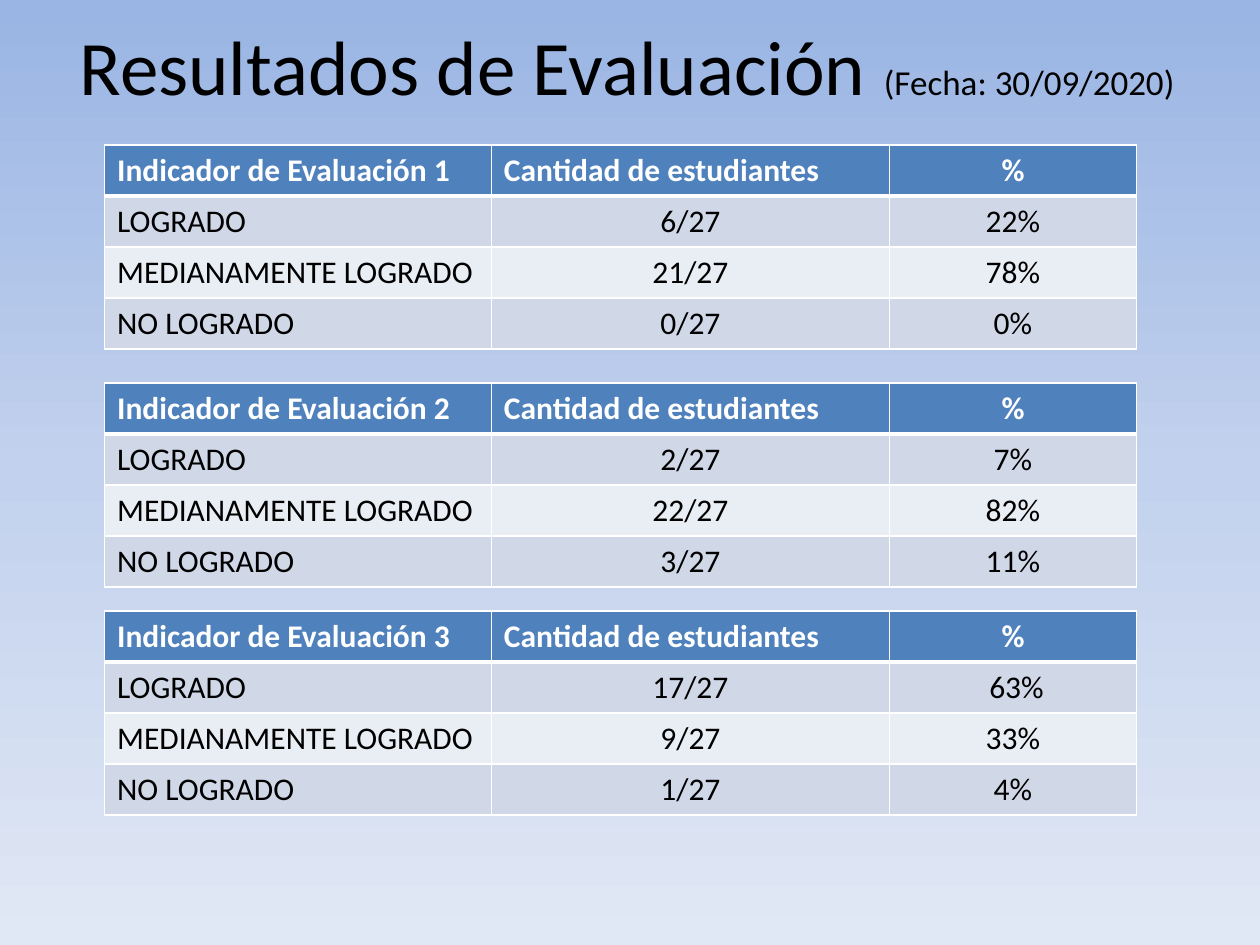
from copy import deepcopy
from typing import NamedTuple

from lxml import etree
from pptx import Presentation
from pptx.dml.color import RGBColor
from pptx.enum import text
from pptx.oxml.ns import qn
from pptx.util import Inches, Pt

FONT = "Calibri"
BLACK, WHITE = "000000", "FFFFFF"
HEADER_FILL = "4F81BD"
BAND_FILLS = ("D0D8E8", "E9EDF4")
SKY_STOPS = ((0, "9AB5E4"), (0.5, "C2D1ED"), (1, "E1E8F5"))
LEVELS = ("LOGRADO", "MEDIANAMENTE LOGRADO", "NO LOGRADO")
COLUMN_WIDTHS = (3.07, 3.16, 1.96)
ROW_HEIGHT = 0.405
TABLE_LEFT = 0.83
STUDENTS = 27


class Indicator(NamedTuple):
    number: int
    top: float
    counts: tuple[int, ...]
    shares: tuple[str, ...]


INDICATORS = (
    Indicator(1, 1.15, (6, 21, 0), ("22%", "78%", "0%")),
    Indicator(2, 3.04, (2, 22, 3), ("7%", "82%", "11%")),
    Indicator(3, 4.85, (17, 9, 1), (" 63%", "33%", "4%")),
)


def rgb(value: str) -> RGBColor:
    return RGBColor.from_string(value)


def add_run(paragraph, wording: str, size: float, color: str, bold: bool = False) -> None:
    run = paragraph.add_run()
    run.text = wording
    run.font.name = FONT
    run.font.size = Pt(size)
    run.font.bold = bold
    run.font.color.rgb = rgb(color)


def paint_background(slide) -> None:
    """Fill the background with the stops running from top to bottom."""
    fill = slide.background.fill
    fill.gradient()
    fill.gradient_angle = 270
    stop_list = slide.element.find(".//" + qn("a:gsLst"))
    stop_list.append(deepcopy(stop_list[0]))
    for stop, (position, color) in zip(fill.gradient_stops, SKY_STOPS):
        stop.position = position
        stop.color.rgb = rgb(color)


def add_title(slide) -> None:
    box = slide.shapes.add_textbox(Inches(0.51), Inches(0), Inches(9), Inches(1.02))
    frame = box.text_frame
    frame.word_wrap = True
    frame.vertical_anchor = text.MSO_ANCHOR.MIDDLE
    paragraph = frame.paragraphs[0]
    paragraph.alignment = text.PP_ALIGN.CENTER
    add_run(paragraph, "Resultados de Evaluación ", 44, BLACK)
    add_run(paragraph, "(Fecha: 30/09/2020) ", 20, BLACK)


def set_borders(cell, top: float, bottom: float) -> None:
    """Draw white borders; the sides are always 1 pt wide."""
    properties = cell._tc.get_or_add_tcPr()
    widths = (("a:lnL", 1), ("a:lnR", 1), ("a:lnT", top), ("a:lnB", bottom))
    for index, (tag, width) in enumerate(widths):
        line = etree.Element(qn(tag), w=str(Pt(width)))
        solid = etree.SubElement(line, qn("a:solidFill"))
        etree.SubElement(solid, qn("a:srgbClr"), val=WHITE)
        properties.insert(index, line)


def add_indicator_table(slide, indicator: Indicator) -> None:
    rows = [(f"Indicador de Evaluación {indicator.number}", "Cantidad de estudiantes", "%")]
    for level, count, share in zip(LEVELS, indicator.counts, indicator.shares):
        rows.append((level, f"{count}/{STUDENTS}", share))

    table = slide.shapes.add_table(
        len(rows), len(COLUMN_WIDTHS), Inches(TABLE_LEFT), Inches(indicator.top),
        Inches(sum(COLUMN_WIDTHS)), Inches(ROW_HEIGHT * len(rows)),
    ).table
    for column, width in zip(table.columns, COLUMN_WIDTHS):
        column.width = Inches(width)

    for r, row in enumerate(rows):
        table.rows[r].height = Inches(ROW_HEIGHT)
        is_header = r == 0
        for c, wording in enumerate(row):
            cell = table.cell(r, c)
            cell.fill.solid()
            cell.fill.fore_color.rgb = rgb(HEADER_FILL if is_header else BAND_FILLS[(r - 1) % 2])
            set_borders(cell, top=3 if r == 1 else 1, bottom=3 if is_header else 1)
            paragraph = cell.text_frame.paragraphs[0]
            if c == 2 or (c == 1 and not is_header):
                paragraph.alignment = text.PP_ALIGN.CENTER
            add_run(paragraph, wording, 18, WHITE if is_header else BLACK, is_header)


def main() -> None:
    presentation = Presentation()
    presentation.slide_width = Inches(10)
    presentation.slide_height = Inches(7.5)
    slide = presentation.slides.add_slide(presentation.slide_layouts[6])
    paint_background(slide)
    add_title(slide)
    for indicator in INDICATORS:
        add_indicator_table(slide, indicator)
    presentation.save("out.pptx")


if __name__ == "__main__":
    main()
